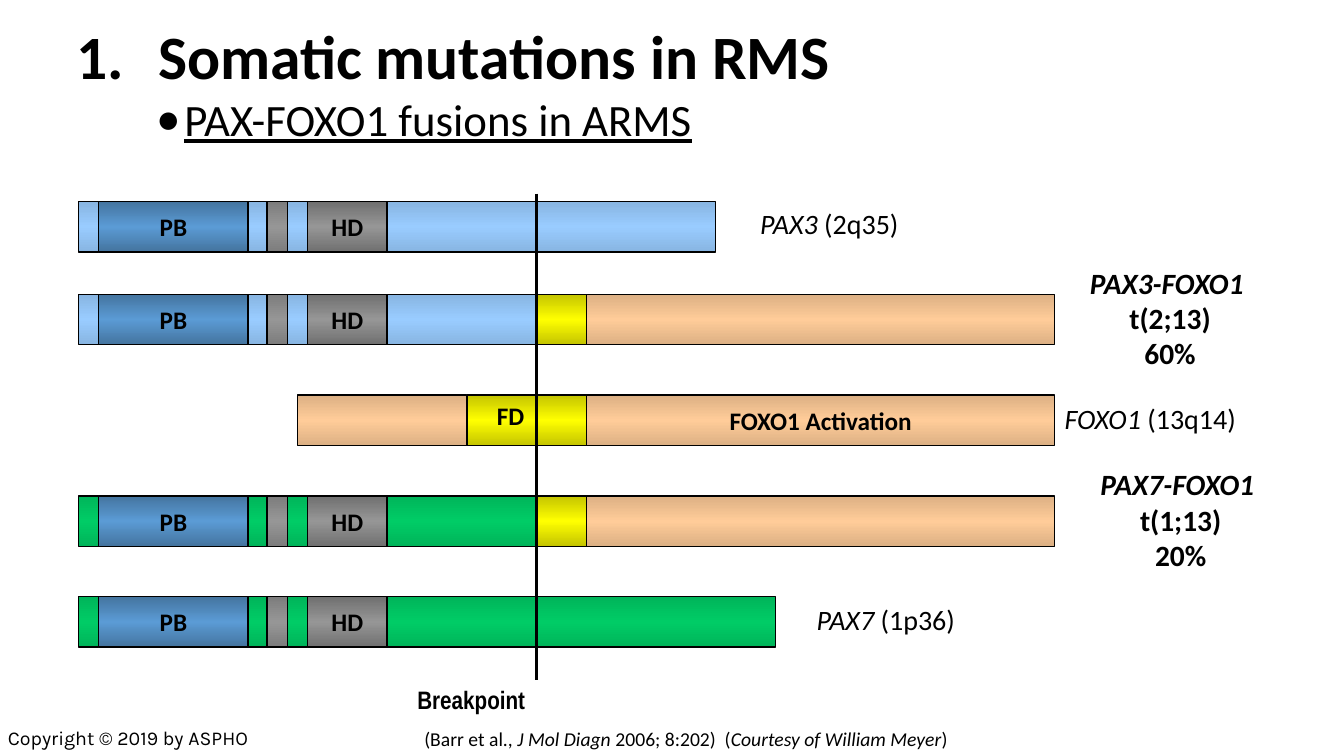
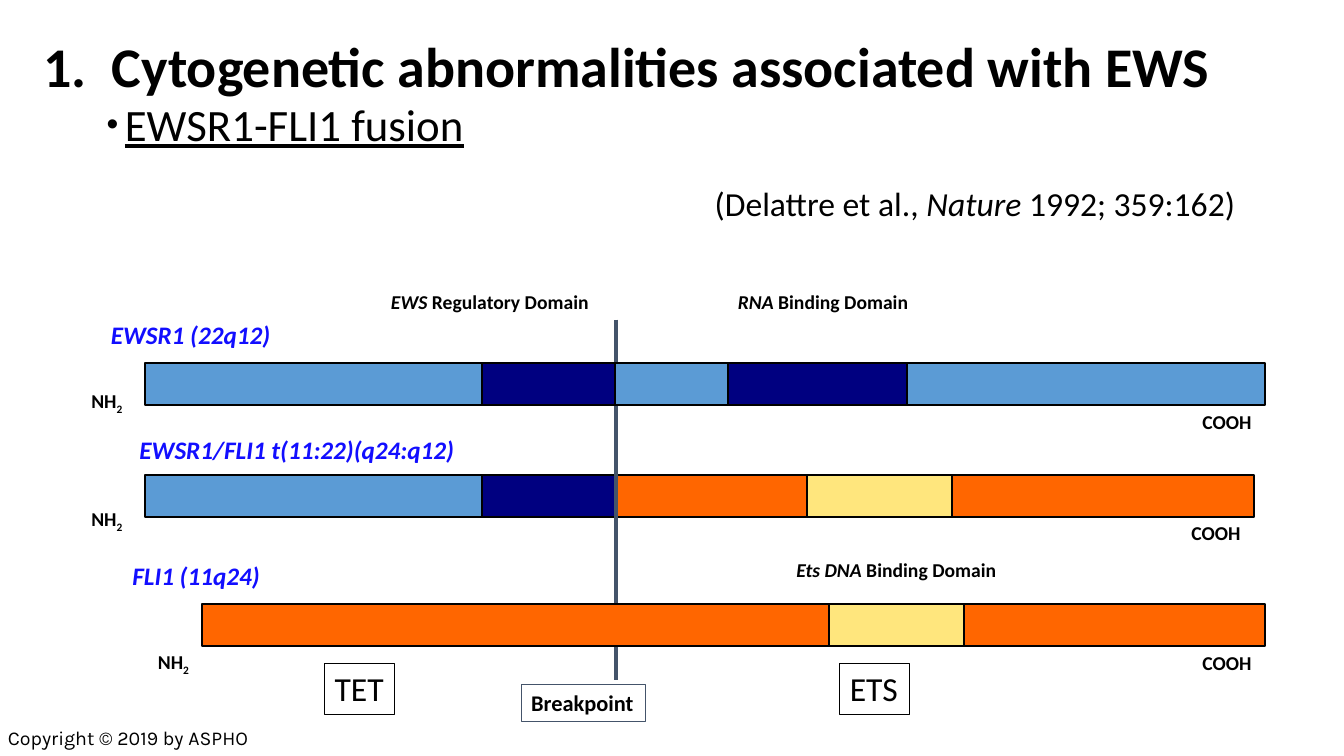
import lxml.etree
import pptx
import pptx.dml.color
import pptx.enum.shapes
import pptx.enum.text
import pptx.oxml.ns
import pptx.util

Inches = pptx.util.Inches
ALIGN = {"left": pptx.enum.text.PP_ALIGN.LEFT, "center": pptx.enum.text.PP_ALIGN.CENTER}
ANCHOR = {"top": pptx.enum.text.MSO_ANCHOR.TOP, "middle": pptx.enum.text.MSO_ANCHOR.MIDDLE}

BLACK, SLATE, LINK_BLUE = "000000", "44546A", "120EFF"
BLUE, NAVY, ORANGE, CREAM = "5B9BD5", "000080", "FF6600", "FFE67D"
ITALIC, UPRIGHT, SUBSCRIPT = {"italic": True}, {"italic": False}, {"baseline": -25000}

# Gradients as (edge, middle)
PAX3_BLUE = ("88B5E2", "99CCFF")
PAX7_GREEN = ("00B55A", "00CC66")
PAIRED_BOX = ("44749F", "5B9BD5")
OCTAPEPTIDE = ("7D7D7D", "969696")
HOMEODOMAIN = ("707070", "969696")
FORKHEAD = ("C4C400", "FFFF00")
FOXO1_PEACH = ("DCB084", "FFCC99")

COPYRIGHT = "Copyright © 2019 by ASPHO"


def pax_head(color):
    """Domains that every PAX protein starts with, as (right edge, fill, label)."""
    return [(0.98, color, ""), (2.46, PAIRED_BOX, "PB"), (2.65, color, ""),
            (2.85, OCTAPEPTIDE, ""), (3.05, color, ""), (3.84, HOMEODOMAIN, "HD")]


FOXO1_TAIL = [(5.82, FORKHEAD, ""), (10.46, FOXO1_PEACH, "")]
RMS_BAR_HEIGHT = 0.5
RMS_BREAKPOINT = 5.32
# Top, left edge, domains
RMS_BARS = [
    (2.0, 0.78, pax_head(PAX3_BLUE) + [(7.1, PAX3_BLUE, "")]),
    (2.92, 0.78, pax_head(PAX3_BLUE) + [(RMS_BREAKPOINT, PAX3_BLUE, "")] + FOXO1_TAIL),
    (3.92, 2.95, [(4.63, FOXO1_PEACH, ""), (5.82, FORKHEAD, ""),
                  (10.46, FOXO1_PEACH, "FOXO1 Activation")]),
    (4.92, 0.78, pax_head(PAX7_GREEN) + [(RMS_BREAKPOINT, PAX7_GREEN, "")] + FOXO1_TAIL),
    (5.92, 0.78, pax_head(PAX7_GREEN) + [(7.69, PAX7_GREEN, "")]),
]
# Box, gene, chromosome band
RMS_GENES = [
    ((7.44, 2.0, 1.62, 0.44), "PAX3", "(2q35)"),
    ((10.46, 3.93, 1.95, 0.44), "FOXO1", "(13q14)"),
    ((8.0, 5.93, 1.62, 0.44), "PAX7", "(1p36)"),
]
# Box, fusion, translocation, share
RMS_FUSIONS = [
    ((10.22, 2.58, 2.77, 1.16), "PAX3-FOXO1", "t(2;13)", "60%"),
    ((10.44, 4.58, 2.54, 1.16), "PAX7-FOXO1", "t(1;13)", "20%"),
]
RMS_CITATION = [("(Barr et al., ", {}), ("J Mol Diagn", ITALIC), (" 2006; 8:202)  (", {}),
                ("Courtesy of William Meyer", ITALIC), (")", {})]

EWS_BAR_HEIGHT = 0.42
EWS_BREAKPOINT = 6.11
EWS_FUSION = {
    "name": "EWSR1/FLI1 t(11:22)(q24:q12)", "name_box": (2.0, 4.25, 1.89, 0.42),
    "top": 4.71, "left": 1.44, "amine": (0.67, 5.0), "acid": (11.67, 5.12),
    "domains": [(4.78, BLUE, ""), (EWS_BREAKPOINT, NAVY, ""), (8.0, ORANGE, ""),
                (9.44, CREAM, ""), (12.44, ORANGE, "")],
}
EWS_PARENTS = [
    {"name": "EWSR1 (22q12)", "name_box": (0.67, 3.14, 2.44, 0.36),
     "top": 3.6, "left": 1.44, "amine": (0.67, 3.83), "acid": (11.78, 4.02),
     "domains": [(4.78, BLUE, ""), (6.1, NAVY, ""), (7.22, BLUE, ""),
                 (9.0, NAVY, ""), (12.55, BLUE, "")]},
    {"name": "FLI1 (11q24)", "name_box": (1.0, 5.5, 1.89, 0.42),
     "top": 5.99, "left": 2.0, "amine": (1.33, 6.42), "acid": (11.78, 6.41),
     "domains": [(8.22, ORANGE, ""), (9.56, CREAM, ""), (12.55, ORANGE, "")]},
]
# Box, italic part, upright part, alignment
EWS_DOMAIN_NAMES = [
    ((3.78, 2.83, 3.0, 0.33), "EWS", " Regulatory Domain", "left"),
    ((7.22, 2.83, 3.0, 0.33), "RNA", " Binding Domain", "left"),
    ((7.78, 5.49, 2.22, 0.33), "Ets DNA", " Binding Domain", "center"),
]
# Box, text, size, bold, border
EWS_FRAMED = [
    ((5.17, 6.79, 1.23, 0.37), "Breakpoint", 16, True, SLATE),
    ((8.33, 6.58, 0.69, 0.51), "ETS", 24, False, BLACK),
    ((3.22, 6.58, 0.69, 0.51), "TET", 24, False, BLACK),
]
EWS_CITATION = [("(Delattre et al., ", {}), ("Nature", ITALIC), (" 1992; 359:162)", {})]


def rgb(hex_color):
    return pptx.dml.color.RGBColor.from_string(hex_color)


def inches(values):
    return [Inches(value) for value in values]


def add_element(parent, tag, **attributes):
    element = lxml.etree.SubElement(parent, pptx.oxml.ns.qn(tag))
    for name, value in attributes.items():
        element.set(name, str(value))
    return element


def write_text(shape, paragraphs, size, font="Calibri", color=BLACK, bold=False, italic=False,
               underline=False, align="left", anchor="top", wrap=True, grow=False):
    """Fill a shape; a paragraph is a string or a list of (text, overrides) runs."""
    frame = shape.text_frame
    frame.word_wrap = wrap
    frame.vertical_anchor = ANCHOR[anchor]
    fit = pptx.enum.text.MSO_AUTO_SIZE
    frame.auto_size = fit.SHAPE_TO_FIT_TEXT if grow else fit.NONE
    for index, runs in enumerate(paragraphs):
        paragraph = frame.add_paragraph() if index else frame.paragraphs[0]
        paragraph.alignment = ALIGN[align]
        for text, overrides in ([(runs, {})] if isinstance(runs, str) else runs):
            run = paragraph.add_run()
            run.text = text
            run.font.name = font
            run.font.size = pptx.util.Pt(size)
            run.font.color.rgb = rgb(color)
            run.font.bold = bold
            run.font.italic = overrides.get("italic", italic)
            run.font.underline = underline
            if "baseline" in overrides:
                run._r.get_or_add_rPr().set("baseline", str(overrides["baseline"]))


def add_text(slide, box, paragraphs, size, **text_format):
    shape = slide.shapes.add_textbox(*inches(box))
    write_text(shape, paragraphs, size, **text_format)
    return shape


def set_marker(paragraph, indent, tag, font, percent=100, **attributes):
    """Give a paragraph a hanging bullet or number."""
    properties = paragraph._p.get_or_add_pPr()
    properties.set("marL", str(Inches(indent)))
    properties.set("indent", str(-Inches(indent)))
    add_element(properties, "a:buSzPct", val=percent * 1000)
    add_element(properties, "a:buFont", typeface=font)
    add_element(properties, tag, **attributes)


def add_title(slide, box, text, size, indent, spacing=1.0):
    shape = add_text(slide, box, [text], size, bold=True, anchor="middle")
    paragraph = shape.text_frame.paragraphs[0]
    set_marker(paragraph, indent, "a:buAutoNum", "Calibri", type="arabicPeriod")
    paragraph.line_spacing = spacing


def add_subtitle(slide, box, text, indent, bullet_font, percent, spacing=1.0):
    shape = add_text(slide, box, [text], 32, underline=True)
    paragraph = shape.text_frame.paragraphs[0]
    set_marker(paragraph, indent, "a:buChar", bullet_font, percent, char="•")
    paragraph.line_spacing = spacing


def set_mirrored_gradient(shape, edge, middle):
    shape.fill.gradient()
    shape.fill.gradient_angle = 90
    stops = shape._element.spPr.find(".//" + pptx.oxml.ns.qn("a:gsLst"))
    for stop in list(stops):
        stops.remove(stop)
    for position, color in ((0, edge), (50, middle), (100, edge)):
        stop = add_element(stops, "a:gs", pos=position * 1000)
        add_element(stop, "a:srgbClr", val=color)


def add_bar(slide, top, left, height, domains, line_width):
    """Draw a protein as adjoining domains, each ending at its right edge."""
    for right, fill, label in domains:
        shape = slide.shapes.add_shape(pptx.enum.shapes.MSO_SHAPE.RECTANGLE,
                                       *inches((left, top, right - left, height)))
        shape.shadow.inherit = False
        if isinstance(fill, tuple):
            set_mirrored_gradient(shape, *fill)
        else:
            shape.fill.solid()
            shape.fill.fore_color.rgb = rgb(fill)
        shape.line.color.rgb = rgb(BLACK)
        shape.line.width = pptx.util.Pt(line_width)
        if label:
            write_text(shape, [label], 18, bold=True, align="center", anchor="middle", wrap=False)
        left = right


def add_breakpoint_line(slide, x, top, bottom, color):
    line = slide.shapes.add_connector(pptx.enum.shapes.MSO_CONNECTOR.STRAIGHT,
                                      *inches((x, top, x, bottom)))
    line.line.color.rgb = rgb(color)
    line.line.width = pptx.util.Pt(2.25)
    add_element(line._element.spPr, "a:effectLst")


def add_slide(presentation):
    slide = presentation.slides.add_slide(presentation.slide_layouts[6])
    add_text(slide, (-0.02, 7.15, 3.4, 0.34), [COPYRIGHT], 14, font="Karla", grow=True)
    return slide


def build_rms_slide(presentation):
    slide = add_slide(presentation)
    add_title(slide, (0.66, 0.12, 11.61, 0.84), "Somatic mutations in RMS", 44, 0.81)
    add_subtitle(slide, (1.45, 0.86, 5.62, 0.64), "PAX-FOXO1 fusions in ARMS",
                 0.28, "Calibri", 110)
    for top, left, domains in RMS_BARS:
        add_bar(slide, top, left, RMS_BAR_HEIGHT, domains, 1)
    for box, gene, band in RMS_GENES:
        add_text(slide, box, [[(gene, ITALIC), (" " + band, {})]], 20, wrap=False, grow=True)
    for box, fusion, translocation, share in RMS_FUSIONS:
        add_text(slide, box, [[(fusion + " ", ITALIC)], translocation, share], 21,
                 bold=True, align="center", grow=True)
    add_text(slide, (4.83, 3.92, 0.83, 0.4), ["FD"], 18, bold=True, grow=True)
    add_breakpoint_line(slide, RMS_BREAKPOINT, 1.92, 6.75, BLACK)
    add_text(slide, (4.04, 6.74, 1.28, 0.4), ["Breakpoint"], 18, font="Arial Narrow",
             bold=True, wrap=False, grow=True)
    add_text(slide, (4.11, 7.16, 6.35, 0.34), [RMS_CITATION], 14, grow=True)


def add_ews_protein(slide, protein):
    label = {"bold": True, "align": "center", "anchor": "middle", "wrap": False}
    add_bar(slide, protein["top"], protein["left"], EWS_BAR_HEIGHT, protein["domains"], 1.5)
    add_text(slide, protein["name_box"], [protein["name"]], 18, color=LINK_BLUE,
             italic=True, **label)
    for end, runs in (("amine", [("NH", {}), ("2", SUBSCRIPT)]), ("acid", "COOH")):
        add_text(slide, (*protein[end], 0.78, 0.33), [runs], 14, **label)


def build_ews_slide(presentation):
    slide = add_slide(presentation)
    add_title(slide, (0.33, 0.25, 12.44, 0.88),
              "Cytogenetic abnormalities associated with EWS", 40, 0.68, 0.9)
    add_subtitle(slide, (0.96, 0.97, 12.0, 0.6), "EWSR1-FLI1 fusion", 0.18, "Arial", 75, 0.9)
    add_text(slide, (6.99, 1.77, 5.42, 0.5), [EWS_CITATION], 24, wrap=False, grow=True)
    add_ews_protein(slide, EWS_FUSION)
    add_breakpoint_line(slide, EWS_BREAKPOINT, 3.17, 6.75, SLATE)
    for protein in EWS_PARENTS:
        add_ews_protein(slide, protein)
    for box, molecule, role, align in EWS_DOMAIN_NAMES:
        add_text(slide, box, [[(molecule, ITALIC), (role, UPRIGHT)]], 14, bold=True,
                 align=align, anchor="middle", wrap=False)
    for box, text, size, bold, border in EWS_FRAMED:
        shape = add_text(slide, box, [text], size, bold=bold, wrap=False, grow=True)
        shape.line.color.rgb = rgb(border)
        shape.line.width = pptx.util.Pt(0.75)


def main():
    presentation = pptx.Presentation()
    presentation.slide_width, presentation.slide_height = inches((13.33, 7.5))
    build_rms_slide(presentation)
    build_ews_slide(presentation)
    presentation.save("out.pptx")


if __name__ == "__main__":
    main()
